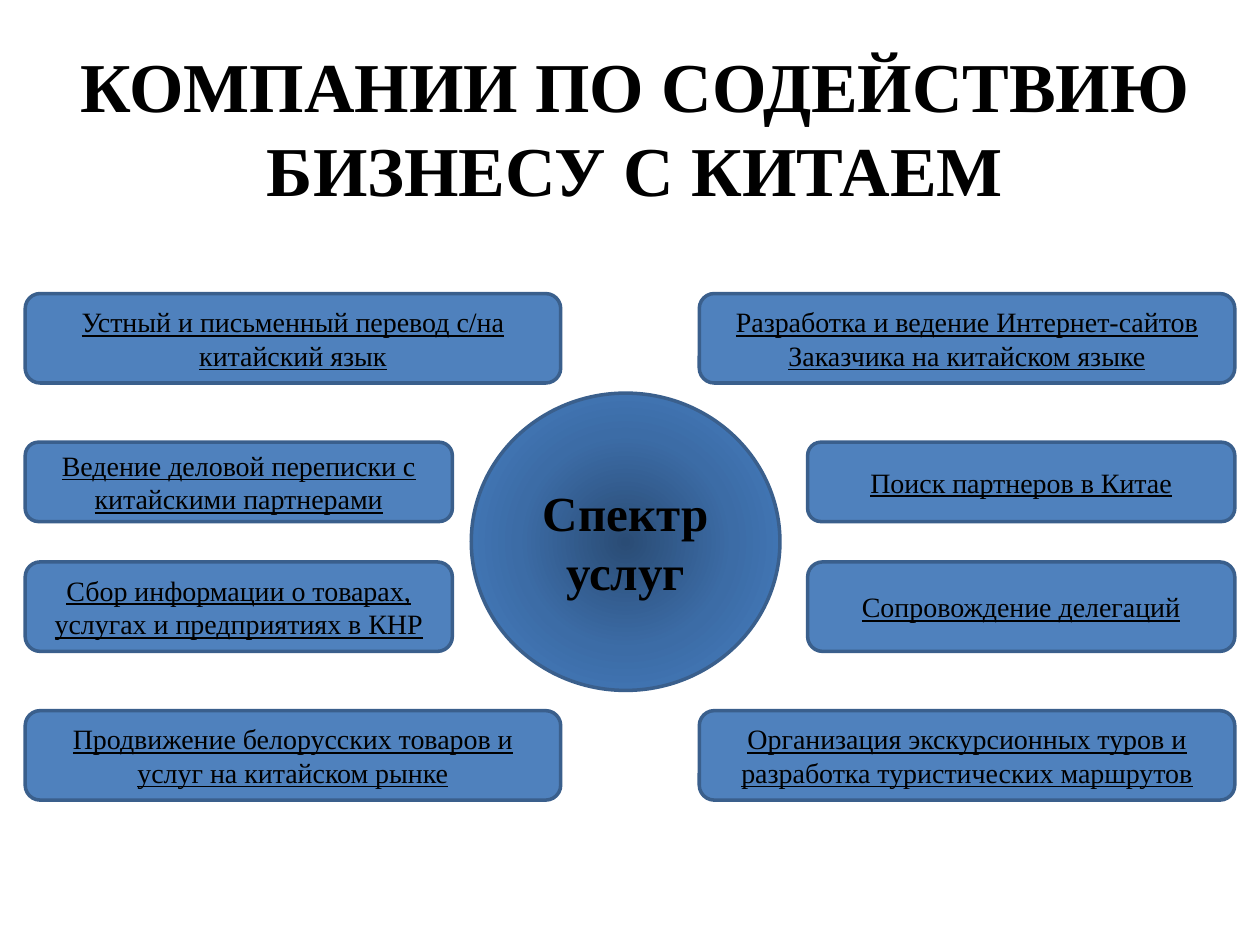
from pptx import Presentation
from pptx.dml.color import RGBColor
from pptx.enum.shapes import MSO_SHAPE as Shape
from pptx.enum.text import MSO_ANCHOR as Anchor, MSO_AUTO_SIZE as AutoSize, PP_ALIGN as Align
from pptx.oxml import parse_xml
from pptx.oxml.ns import nsdecls
from pptx.util import Inches, Pt

BLACK = RGBColor(0x00, 0x00, 0x00)
BLUE = RGBColor(0x4F, 0x81, 0xBD)
OUTLINE = RGBColor(0x3A, 0x5F, 0x8C)
GRADIENT = [(0, RGBColor(0x2A, 0x4C, 0x75)),
            (50, RGBColor(0x3C, 0x6C, 0xA6)),
            (100, RGBColor(0x47, 0x80, 0xC5))]

HEADING = {"size": Pt(40), "bold": True}
HUB = {"size": Pt(28), "bold": True}
SERVICE = {"size": Pt(16), "underline": True}


def write(box, text, anchor, style):
    frame = box.text_frame
    frame.word_wrap = True
    frame.auto_size = AutoSize.NONE
    frame.vertical_anchor = anchor
    para = frame.paragraphs[0]
    para.alignment = Align.CENTER
    span = para.add_run()
    span.text = text
    span.font.color.rgb = BLACK
    for name, value in {"name": "Times New Roman", **style}.items():
        setattr(span.font, name, value)


def add_box(kind, left, top, width, height, text, style):
    box = page.shapes.add_shape(kind, Inches(left), Inches(top), Inches(width), Inches(height))
    box.shadow.inherit = False
    box.fill.solid()
    box.fill.fore_color.rgb = BLUE
    box.line.color.rgb = OUTLINE
    box.line.width = Pt(2)
    write(box, text, Anchor.MIDDLE, style)
    return box


deck = Presentation()
deck.slide_width, deck.slide_height = Inches(10), Inches(7.5)
page = deck.slides.add_slide(deck.slide_layouts[5])

# Title
title = page.shapes.title
title.left, title.top = Inches(0.51), Inches(0.29)
title.width, title.height = Inches(9.06), Inches(1.45)
write(title, "КОМПАНИИ ПО СОДЕЙСТВИЮ БИЗНЕСУ С КИТАЕМ", Anchor.TOP, HEADING)

# Central circle with a radial gradient
hub = add_box(Shape.OVAL, 3.74, 3.12, 2.45, 2.36, "Спектр услуг", HUB)
stops = "".join(f'<a:gs pos="{place * 1000}"><a:srgbClr val="{color}"/></a:gs>'
                for place, color in GRADIENT)
radial = parse_xml(
    f'<a:gradFill {nsdecls("a")} rotWithShape="1"><a:gsLst>{stops}</a:gsLst>'
    '<a:path path="circle"><a:fillToRect l="50000" t="50000" r="50000" b="50000"/></a:path>'
    '</a:gradFill>')
solid = hub.fill._xPr.find("{http://schemas.openxmlformats.org/drawingml/2006/main}solidFill")
solid.getparent().replace(solid, radial)

# Services, mirrored on both sides of the circle
MARGIN = 0.2
rows = [
    (2.33, 4.25, 0.71, "Устный и письменный перевод с/на китайский язык",
     "Разработка и ведение Интернет-сайтов Заказчика на китайском языке"),
    (3.51, 3.39, 0.63, "Ведение деловой переписки с китайскими партнерами",
     "Поиск партнеров в Китае"),
    (4.46, 3.39, 0.71, "Сбор информации о товарах, услугах и предприятиях в КНР",
     "Сопровождение делегаций"),
    (5.64, 4.25, 0.71, "Продвижение белорусских товаров и услуг на китайском рынке",
     "Организация экскурсионных туров и разработка туристических маршрутов"),
]
for top, width, height, *texts in rows:
    for left, text in zip((MARGIN, 10 - MARGIN - width), texts):
        add_box(Shape.ROUNDED_RECTANGLE, left, top, width, height, text, SERVICE)

deck.save("out.pptx")
